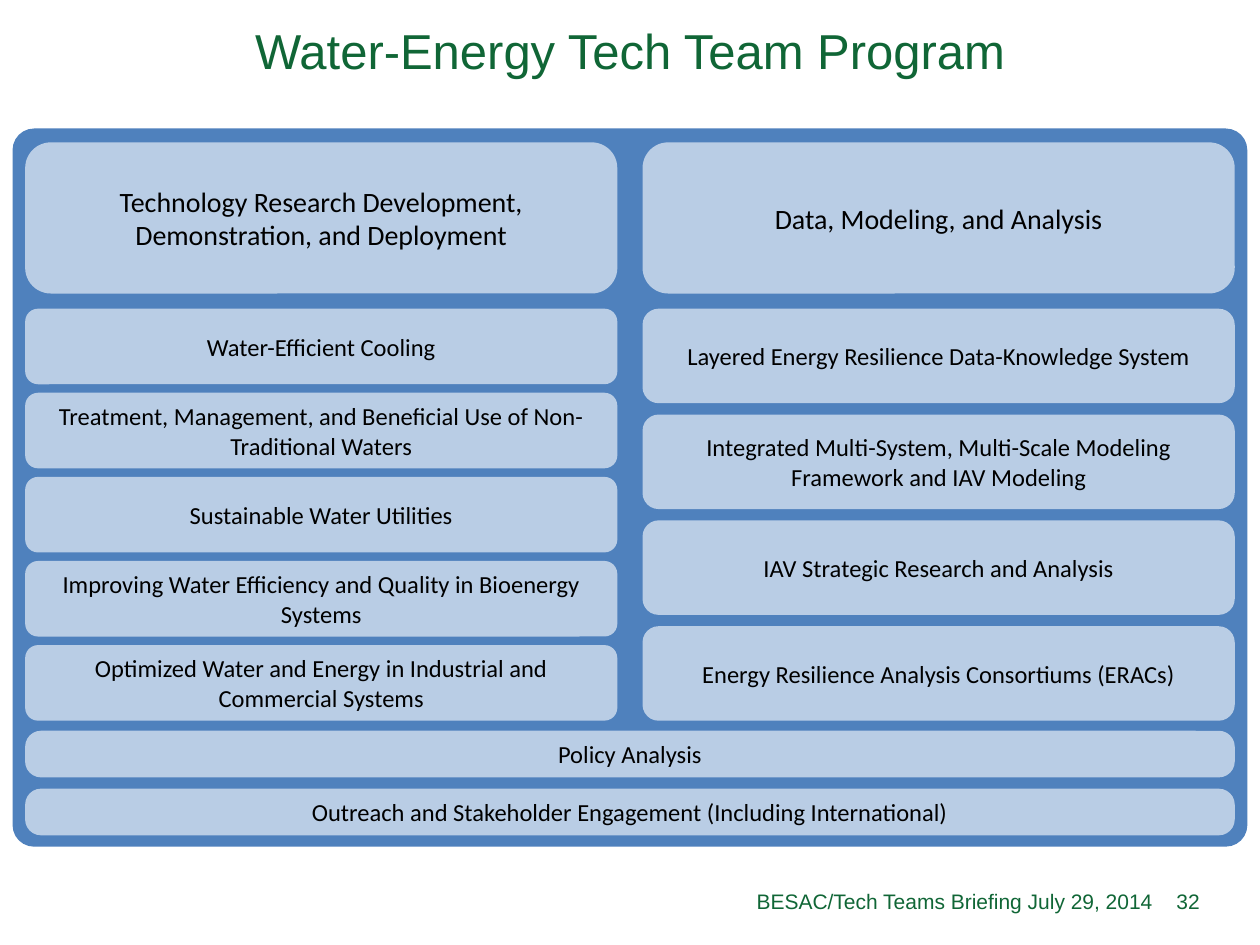
import pptx
import pptx.dml.color
import pptx.enum.shapes
import pptx.enum.text
import pptx.util

Pt = pptx.util.Pt
RGBColor = pptx.dml.color.RGBColor
Align = pptx.enum.text.PP_ALIGN

GREEN = RGBColor(0x10, 0x66, 0x36)
PANEL_BLUE = RGBColor(0x4F, 0x81, 0xBD)
CARD_BLUE = RGBColor(0xB9, 0xCD, 0xE5)
BLACK = RGBColor(0, 0, 0)

COLUMNS = [
    ("Technology Research Development, Demonstration, and Deployment", 43.2, [
        "Water-Efficient Cooling",
        "Treatment, Management, and Beneficial Use of Non-Traditional Waters",
        "Sustainable Water Utilities",
        "Improving Water Efficiency and Quality in Bioenergy Systems",
        "Optimized Water and Energy in Industrial and Commercial Systems",
    ]),
    ("Data, Modeling, and Analysis", 54, [
        "Layered Energy Resilience Data-Knowledge System",
        "Integrated Multi-System, Multi-Scale Modeling Framework and IAV Modeling",
        "IAV Strategic Research and Analysis",
        "Energy Resilience Analysis Consortiums (ERACs)",
    ]),
]
SHARED_EFFORTS = [
    "Policy Analysis",
    "Outreach and Stakeholder Engagement (Including International)",
]


def write(frame, text, size, font, color, align):
    frame.word_wrap = True
    frame.vertical_anchor = pptx.enum.text.MSO_ANCHOR.MIDDLE
    paragraph = frame.paragraphs[0]
    paragraph.alignment = align
    run = paragraph.add_run()
    run.text = text
    run.font.size = Pt(size)
    run.font.name = font
    run.font.color.rgb = color


def add_label(slide, box, text, size, align):
    label = slide.shapes.add_textbox(*map(Pt, box))
    write(label.text_frame, text, size, "Arial", GREEN, align)


def add_card(slide, box, fill, corner, text=None, size=14):
    card = slide.shapes.add_shape(
        pptx.enum.shapes.MSO_SHAPE.ROUNDED_RECTANGLE, *map(Pt, box))
    card.adjustments[0] = corner
    card.shadow.inherit = False
    card.fill.solid()
    card.fill.fore_color.rgb = fill
    card.line.fill.background()
    if text:
        write(card.text_frame, text, size, "Calibri", BLACK, Align.CENTER)


def add_column(slide, box, heading, card_height, topics):
    left, top, width, height = box
    heading_height = 86.4
    add_card(slide, (left, top, width, heading_height), CARD_BLUE, 0.17, heading, 16)
    first_top = top + heading_height + 8.64
    pitch = (top + height - card_height - first_top) / (len(topics) - 1)
    for row, topic in enumerate(topics):
        add_card(slide, (left, first_top + row * pitch, width, card_height),
                 CARD_BLUE, 0.17, topic)


def add_shared_efforts(slide, box):
    left, top, width, height = box
    bar_height = 26.64
    pitch = (height - bar_height) / (len(SHARED_EFFORTS) - 1)
    for row, effort in enumerate(SHARED_EFFORTS):
        add_card(slide, (left, top + row * pitch, width, bar_height),
                 CARD_BLUE, 0.34, effort)


def add_program(slide, box):
    left, top, width, height = box
    margin, gutter = 7.2, 14.4
    inner_left, inner_width = left + margin, width - 2 * margin
    column_width = (inner_width - gutter) / 2
    add_card(slide, box, PANEL_BLUE, 0.03)
    for index, column in enumerate(COLUMNS):
        column_left = inner_left + index * (column_width + gutter)
        add_column(slide, (column_left, top + 7.92, column_width, 330.48), *column)
    add_shared_efforts(slide, (inner_left, top + 344.16, inner_width, 59.76))


def add_footer(slide, box):
    left, top, width, height = box
    number_width = 30.24
    add_label(slide, (left + width - number_width, top, number_width, height),
              "32", 12, Align.RIGHT)
    add_label(slide, (left, top, 419.76, height),
              "BESAC/Tech Teams Briefing July 29, 2014", 12, Align.RIGHT)


def main():
    presentation = pptx.Presentation()
    presentation.slide_width, presentation.slide_height = Pt(720), Pt(540)
    slide = presentation.slides.add_slide(presentation.slide_layouts[6])
    add_label(slide, (0, 10.8, 720, 35.28), "Water-Energy Tech Team Program", 28, Align.CENTER)
    add_program(slide, (7.2, 73.44, 705.6, 410.4))
    add_footer(slide, (246.24, 500.4, 446.4, 28.8))
    presentation.save("out.pptx")


if __name__ == "__main__":
    main()
